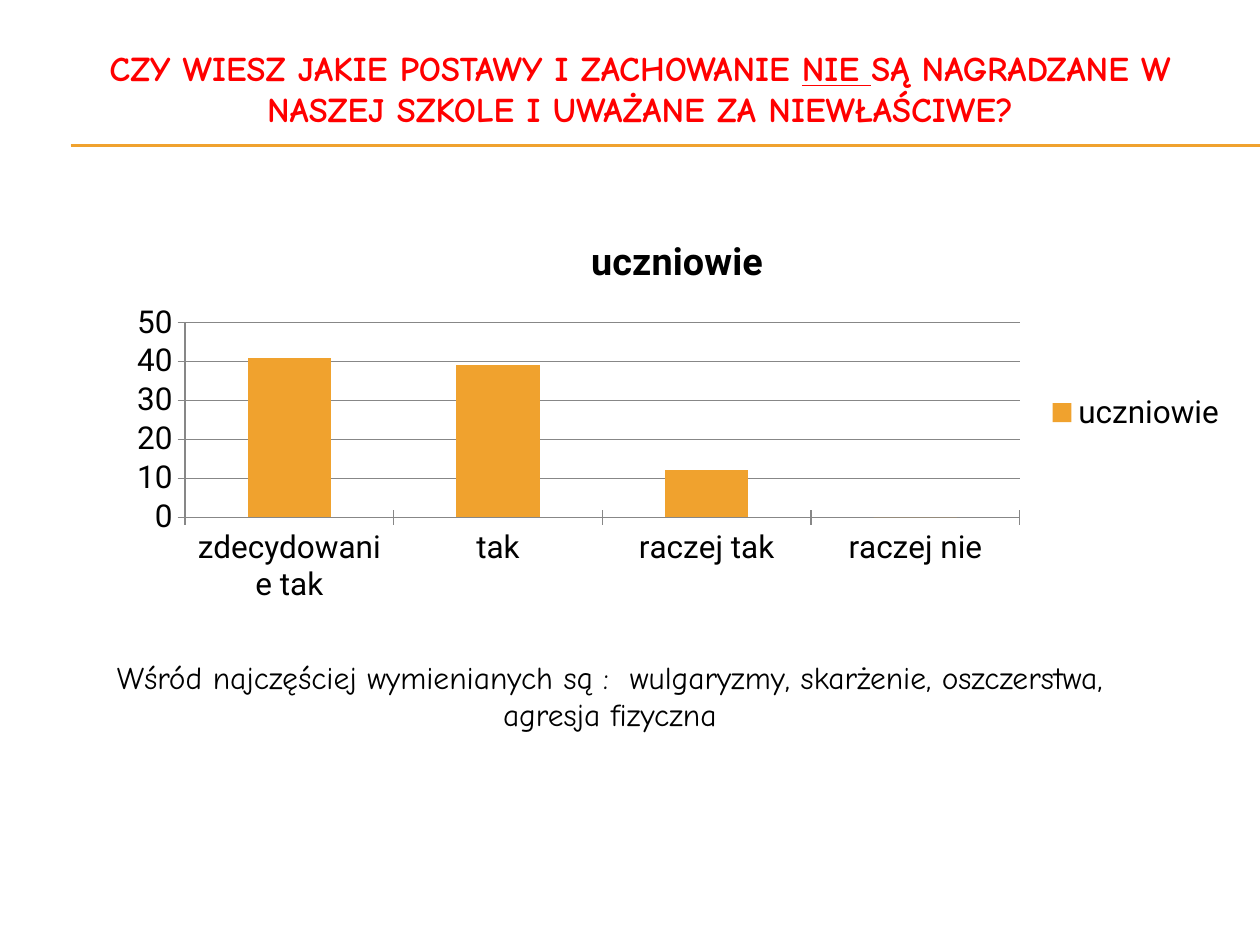
from lxml import etree
from pptx import Presentation
from pptx.chart.data import CategoryChartData
from pptx.dml.color import RGBColor
from pptx.enum.chart import XL_CHART_TYPE, XL_LEGEND_POSITION, XL_TICK_MARK
from pptx.enum.shapes import MSO_CONNECTOR
from pptx.enum.text import MSO_ANCHOR, PP_ALIGN
from pptx.oxml.ns import qn
from pptx.util import Inches, Pt

COLUMN = XL_CHART_TYPE.COLUMN_CLUSTERED
LEGEND_RIGHT = XL_LEGEND_POSITION.RIGHT
TICK_CROSS = XL_TICK_MARK.CROSS
STRAIGHT = MSO_CONNECTOR.STRAIGHT
MIDDLE, TOP = MSO_ANCHOR.MIDDLE, MSO_ANCHOR.TOP
CENTER = PP_ALIGN.CENTER

COLORS = {"accent": "F0A22E", "title": "FF0000", "text": "000000", "axis": "878787"}
TEXT_FONT, CHART_FONT = "Comic Neue", "Roboto"


def rgb(name):
    return RGBColor.from_string(COLORS[name])


def format_font(font, color, **values):
    for name, value in values.items():
        setattr(font, name, value)
    font.color.rgb = rgb(color)


def add_text(slide, box, runs, color, anchor, **values):
    """Add one centred paragraph from (text, underlined) pairs."""
    frame = slide.shapes.add_textbox(*map(Inches, box)).text_frame
    frame.word_wrap = True
    frame.vertical_anchor = anchor
    paragraph = frame.paragraphs[0]
    paragraph.alignment = CENTER
    for text, underlined in runs:
        run = paragraph.add_run()
        run.text = text
        format_font(run.font, color, name=TEXT_FONT, underline=underlined, **values)


def add_rule(slide, left, right, y):
    rule = slide.shapes.add_connector(
        STRAIGHT, Inches(left), Inches(y), Inches(right), Inches(y))
    rule.line.color.rgb = rgb("accent")
    rule.line.width = Pt(0.75)
    etree.SubElement(rule._element.spPr, qn("a:effectLst"))


def add_header(slide, box):
    left, top, width, height = box
    for y in (1.15, 1.16):
        add_rule(slide, 0.56, 10, y)
    runs = [
        ("CZY WIESZ JAKIE POSTAWY I ZACHOWANIE ", False),
        ("NIE ", True),
        ("SĄ NAGRADZANE W NASZEJ SZKOLE I UWAŻANE ZA NIEWŁAŚCIWE?", False),
    ]
    add_text(slide, box, runs, "title", MIDDLE, size=Pt(19.8), bold=True)


def add_answer_chart(slide, box):
    data = CategoryChartData()
    data.categories = ["zdecydowanie tak", "tak", "raczej tak", "raczej nie"]
    data.add_series("uczniowie", (41, 39, 12, 0))
    chart = slide.shapes.add_chart(COLUMN, *map(Inches, box), data).chart
    format_font(chart.font, "text", name=CHART_FONT, size=Pt(18))

    chart.has_title = True
    title = chart.chart_title.text_frame
    title.text = "uczniowie"
    format_font(title.paragraphs[0].runs[0].font, "text",
                name=CHART_FONT, size=Pt(21.6), bold=True)

    chart.has_legend = True
    chart.legend.position = LEGEND_RIGHT
    chart.legend.include_in_layout = False

    plot = chart.plots[0]
    plot.gap_width = 150
    plot.vary_by_categories = False
    fill = plot.series[0].format.fill
    fill.solid()
    fill.fore_color.rgb = rgb("accent")

    value_axis = chart.value_axis
    scale = {"minimum_scale": 0, "maximum_scale": 50, "major_unit": 10,
             "has_major_gridlines": True}
    for name, value in scale.items():
        setattr(value_axis, name, value)
    for axis in (chart.category_axis, value_axis):
        axis.major_tick_mark = TICK_CROSS
    for part in (chart.category_axis, value_axis, value_axis.major_gridlines):
        part.format.line.color.rgb = rgb("axis")
        part.format.line.width = Pt(0.75)


def add_comment(slide, box):
    text = ("Wśród najczęściej wymienianych są :  wulgaryzmy, skarżenie, "
            "oszczerstwa, agresja fizyczna")
    add_text(slide, box, [(text, False)], "text", TOP, size=Pt(18))


def main():
    presentation = Presentation()
    presentation.slide_width = Inches(10)
    presentation.slide_height = Inches(7.5)
    slide = presentation.slides.add_slide(presentation.slide_layouts[6])
    add_header(slide, (0.33, 0.3, 9.5, 0.8))
    add_answer_chart(slide, (0.91, 1.7, 8.93, 3.15))
    add_comment(slide, (0.43, 5.17, 8.82, 0.71))
    presentation.save("out.pptx")


if __name__ == "__main__":
    main()
